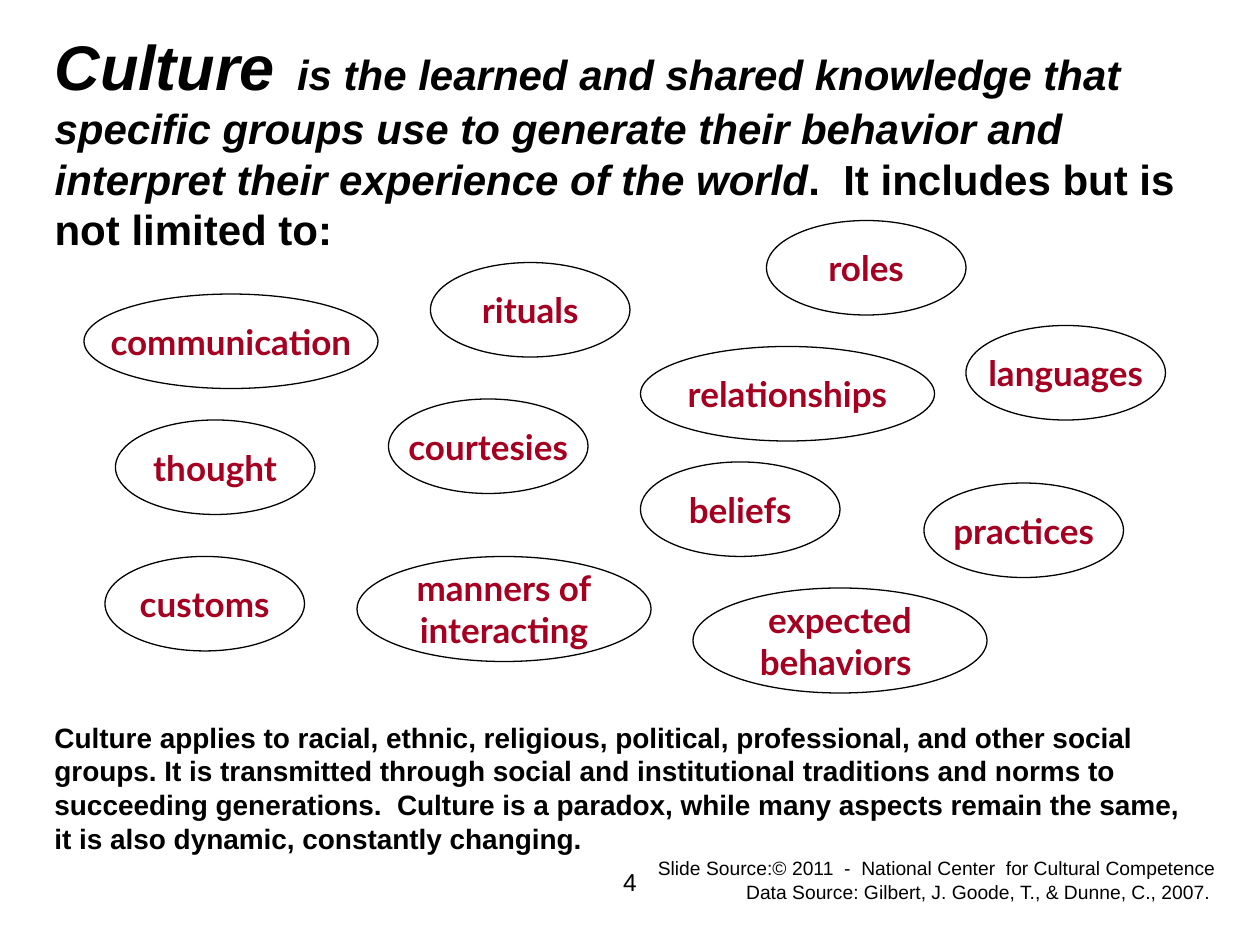
"""Build a slide that defines culture and surrounds it with examples."""
from lxml.etree import SubElement
from pptx import Presentation
from pptx.dml.color import RGBColor
from pptx.enum.shapes import MSO_SHAPE
from pptx.enum.text import MSO_ANCHOR as ANCHOR, MSO_AUTO_SIZE as FIT, PP_ALIGN as ALIGN
from pptx.oxml.ns import qn
from pptx.util import Pt

PX = 9525
COLORS = {"ink": "000000", "paper": "FFFFFF", "term": "A50021"}

DEFINITION = [
    ("Culture", 36, True),
    ("  ", 22.5, True),
    ("is the learned and shared knowledge that specific groups use to generate "
     "their behavior and interpret their experience of the world", 24, True),
    (".  It includes but is not limited to:", 24, False),
]
DEFINITION_BOX = (32, 16, 888, 152)

NARROW, WIDE, TALL = (152, 72), (224, 72), (224, 80)
TERMS = [
    ("thought", 88, 320, NARROW),
    ("languages", 736, 248, NARROW),
    ("beliefs", 488, 352, NARROW),
    ("customs", 80, 424, NARROW),
    ("practices", 704, 368, NARROW),
    ("courtesies", 296, 304, NARROW),
    ("rituals", 328, 200, NARROW),
    ("communication", 64, 224, WIDE),
    ("roles", 584, 168, NARROW),
    ("relationships", 488, 264, WIDE),
    ("expected\nbehaviors ", 528, 448, TALL),
    ("manners of\ninteracting", 272, 424, TALL),
]

SCOPE = "\n".join([
    "Culture applies to racial, ethnic, religious, political, professional, and other social",
    "groups. It is transmitted through social and institutional traditions and norms to",
    "succeeding generations.  Culture is a paradox, while many aspects remain the same,",
    "it is also dynamic, constantly changing.",
])
SOURCES = "\n".join([
    "Slide Source:© 2011  -  National Center  for Cultural Competence",
    "Data Source: Gilbert, J. Goode, T., & Dunne, C., 2007. ",
])
NOTES = [
    (SCOPE, (32, 528, 880, 144), 16, True, ALIGN.LEFT, ANCHOR.MIDDLE, False),
    (SOURCES, (488, 648, 448, 47), 11, False, ALIGN.RIGHT, ANCHOR.TOP, True),
    ("4", (328, 656, 304, 50), 14, False, ALIGN.CENTER, ANCHOR.TOP, True),
]


def emu(*lengths):
    return [n * PX for n in lengths]


def rgb(name):
    return RGBColor.from_string(COLORS[name])


def style_run(r, size, font, color, bold):
    r.font.size, r.font.name, r.font.bold = Pt(size), font, bold
    r.font.color.rgb = rgb(color)


def write(sp, text, size, font, color, bold, align, anchor, wrap):
    tf = sp.text_frame
    tf.text = text
    tf.word_wrap, tf.vertical_anchor = wrap, anchor
    for p in tf.paragraphs:
        p.alignment = align
        for r in p.runs:
            style_run(r, size, font, color, bold)


def add_definition(s):
    s.shapes.title.element.getparent().remove(s.shapes.title.element)
    body = s.placeholders[1]
    body.left, body.top, body.width, body.height = emu(*DEFINITION_BOX)
    tf = body.text_frame
    tf.auto_size = FIT.NONE
    p = tf.paragraphs[0]
    pPr = p._p.get_or_add_pPr()
    pPr.set("marL", "0")
    pPr.set("indent", "0")
    SubElement(pPr, qn("a:buNone"))
    for text, size, italic in DEFINITION:
        r = p.add_run()
        r.text = text
        style_run(r, size, "Arial", "ink", True)
        r.font.italic = italic


def add_term(s, text, x, y, size):
    sp = s.shapes.add_shape(MSO_SHAPE.OVAL, *emu(x, y, *size))
    sp.shadow.inherit = False
    sp.fill.solid()
    sp.fill.fore_color.rgb = rgb("paper")
    sp.line.color.rgb = rgb("ink")
    sp.line.width = Pt(0.75)
    write(sp, text, 20, "Lato", "term", True, ALIGN.CENTER, ANCHOR.MIDDLE, False)


def main():
    prs = Presentation()
    prs.slide_width, prs.slide_height = emu(960, 720)
    s = prs.slides.add_slide(prs.slide_layouts[1])
    add_definition(s)
    for term in TERMS:
        add_term(s, *term)
    for text, box, size, bold, align, anchor, wrap in NOTES:
        sp = s.shapes.add_textbox(*emu(*box))
        write(sp, text, size, "Arial", "ink", bold, align, anchor, wrap)
    prs.save("out.pptx")


if __name__ == "__main__":
    main()
